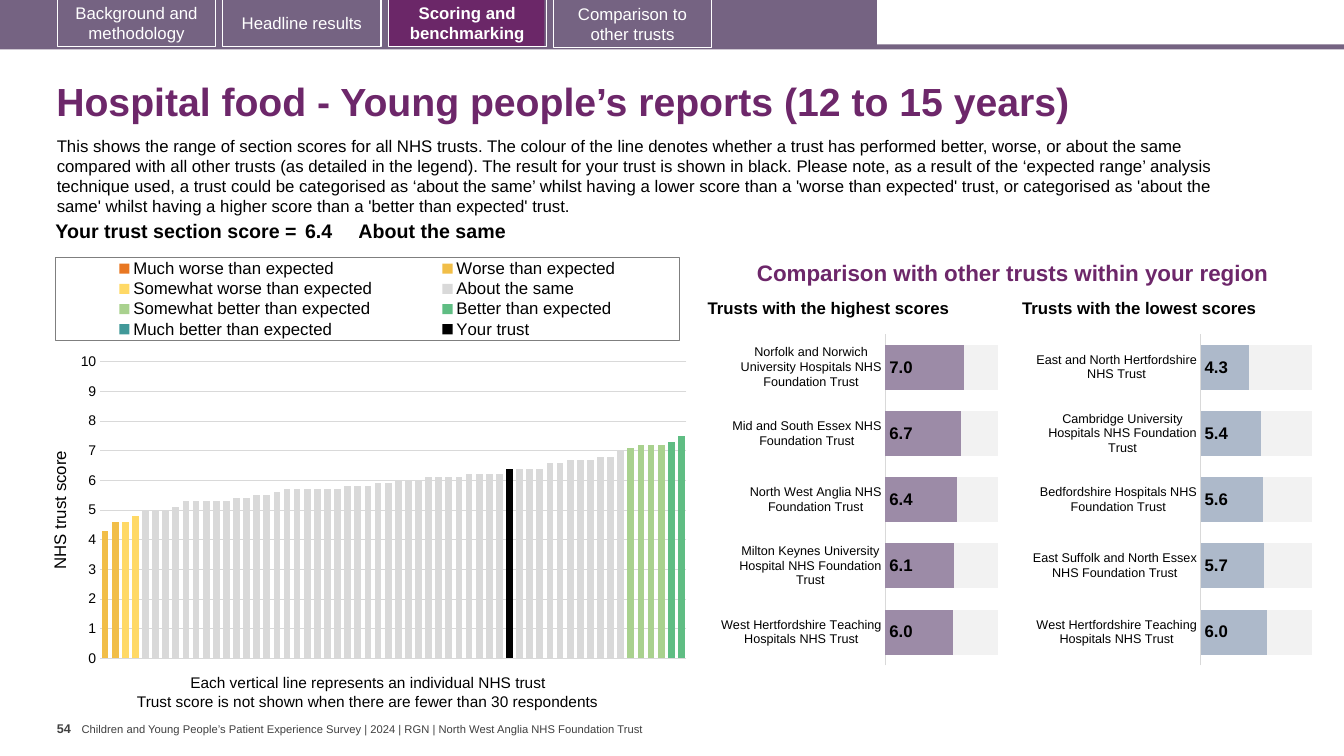
from lxml import etree
from pptx import Presentation
from pptx.chart.data import CategoryChartData
from pptx.dml.color import RGBColor
from pptx.enum.chart import XL_CHART_TYPE, XL_LABEL_POSITION, XL_LEGEND_POSITION, XL_TICK_MARK
from pptx.enum.shapes import MSO_SHAPE
from pptx.enum.text import MSO_ANCHOR, PP_ALIGN
from pptx.oxml import parse_xml
from pptx.oxml.ns import nsdecls, qn
from pptx.util import Inches, Pt

RECT = MSO_SHAPE.RECTANGLE
TOP, MIDDLE, BOTTOM = MSO_ANCHOR.TOP, MSO_ANCHOR.MIDDLE, MSO_ANCHOR.BOTTOM
CENTER, RIGHT = PP_ALIGN.CENTER, PP_ALIGN.RIGHT
COLUMNS, BARS = XL_CHART_TYPE.COLUMN_CLUSTERED, XL_CHART_TYPE.BAR_STACKED
NO_TICK = XL_TICK_MARK.NONE

THEME = {
    "font": "Arial",
    "purple": RGBColor.from_string("6D276A"), "active": RGBColor.from_string("6B2768"),
    "band": RGBColor.from_string("756382"), "white": RGBColor.from_string("FFFFFF"),
    "black": RGBColor.from_string("000000"), "footer": RGBColor.from_string("404040"),
    "grid": RGBColor.from_string("D9D9D9"), "rest": RGBColor.from_string("F2F2F2"),
    "highest": RGBColor.from_string("9C8BA7"), "lowest": RGBColor.from_string("ADB9CA"),
    "title": Pt(28), "heading": Pt(16), "score": Pt(14), "body": Pt(12),
    "note": Pt(11), "axis": Pt(10), "label": Pt(9), "foot": Pt(8),
}

prs = Presentation()
prs.slide_width, prs.slide_height = Inches(13.33), Inches(7.5)
COL, ROW = prs.slide_width / 160, prs.slide_height / 90
s = prs.slides.add_slide(prs.slide_layouts[6])


def place(x, y, w, h):
    return int(x * COL), int(y * ROW), int(w * COL), int(h * ROW)


def style(font, size, color="black", bold=False):
    font.name, font.size, font.bold = THEME["font"], THEME[size], bold
    font.color.rgb = THEME[color]


for x, y, w, h, color in [
    (0, 5.28, 160, 0.6, "band"),
    (0, 0, 104.4, 5.64, "band"),
    (46.32, 0, 18.48, 5.52, "active"),
]:
    bar = s.shapes.add_shape(RECT, *place(x, y, w, h))
    bar.shadow.inherit = False
    bar.fill.solid()
    bar.fill.fore_color.rgb = THEME[color]
    bar.line.fill.background()

for i, (name, y) in enumerate([
    ("Background and methodology", -0.12), ("Headline results", -0.12),
    ("Scoring and benchmarking", -0.12), ("Comparison to other trusts", 0),
]):
    tab = s.shapes.add_shape(RECT, *place(6.84 + 19.68 * i, y, 18.84, 5.64))
    tab.shadow.inherit = False
    tab.fill.background()
    tab.line.color.rgb = THEME["white"]
    tab.line.width = Pt(0.75)
    tf = tab.text_frame
    tf.word_wrap, tf.vertical_anchor = True, MIDDLE
    p = tf.paragraphs[0]
    p.text, p.alignment = name, CENTER
    style(p.font, "body", "white", name == "Scoring and benchmarking")

intro = (
    "This shows the range of section scores for all NHS trusts. The colour of the line denotes "
    "whether a trust has performed better, worse, or about the same compared with all other trusts "
    "(as detailed in the legend). The result for your trust is shown in black. Please note, as a "
    "result of the ‘expected range’ analysis technique used, a trust could be categorised as ‘about "
    "the same’ whilst having a lower score than a 'worse than expected' trust, or categorised as "
    "'about the same' whilst having a higher score than a 'better than expected' trust."
)
PADDED, FLUSH = (0.1, 0.05), (0, 0)
for text, at, size, color, bold, anchor, inset, wrap, spacing in [
    ("Hospital food - Young people’s reports (12 to 15 years)", (5.52, 8.04, 149.9, 8.64),
     "title", "purple", True, MIDDLE, PADDED, True, 0.9),
    (intro, (5.58, 15.54, 145.56, 10.92), "body", "black", False, TOP, PADDED, True, 1),
    ("Comparison with other trusts within your region", (90.12, 27.96, 65.64, 6.12),
     "heading", "purple", True, BOTTOM, FLUSH, True, 0.9),
    ("Trusts with the highest scores", (84.24, 35.16, 34.32, 2.76),
     "body", "black", True, BOTTOM, FLUSH, True, 0.9),
    ("Trusts with the lowest scores", (121.68, 35.16, 33.48, 2.76),
     "body", "black", True, BOTTOM, FLUSH, True, 0.9),
    ("Each vertical line represents an individual NHS trust", (21.48, 79.56, 45, 3.48),
     "note", "black", False, TOP, PADDED, False, 1),
    ("Trust score is not shown when there are fewer than 30 respondents",
     (15.12, 81.84, 57.72, 3.48), "note", "black", False, TOP, PADDED, False, 1),
    ("54", (6.78, 85.2, 3, 4.8), "label", "footer", True, TOP, (0, 0.05), True, 1),
    ("Children and Young People’s Patient Experience Survey | 2024 | RGN | North West Anglia NHS "
     "Foundation Trust", (9.72, 86, 68, 1.56), "foot", "footer", False, MIDDLE, FLUSH, True, 1),
]:
    tf = s.shapes.add_textbox(*place(*at)).text_frame
    tf.word_wrap, tf.vertical_anchor = wrap, anchor
    tf.margin_left = tf.margin_right = Inches(inset[0])
    tf.margin_top = tf.margin_bottom = Inches(inset[1])
    p = tf.paragraphs[0]
    p.text, p.line_spacing = text, spacing
    style(p.font, size, color, bold)

table = s.shapes.add_table(1, 3, *place(4.28, 25.8, 140.4, 3.7)).table
table.first_row = table.horz_banding = False
for i, (text, width, side) in enumerate([
    ("Your trust section score =", 31.56, 0.04), ("6.4", 6.84, 0.04), ("About the same", 102, 0),
]):
    table.columns[i].width = int(width * COL)
    cell = table.cell(0, i)
    cell.fill.background()
    cell.margin_left = cell.margin_right = Inches(side)
    cell.margin_top = cell.margin_bottom = Inches(0.04)
    p = cell.text_frame.paragraphs[0]
    p.text = text
    style(p.font, "score", bold=True)
table.cell(0, 0).text_frame.paragraphs[0].alignment = RIGHT

same = ([5] * 3 + [5.1] + [5.3] * 5 + [5.4] * 2 + [5.5] * 2 + [5.6] + [5.7] * 6 + [5.8] * 3
        + [5.9] * 2 + [6] * 3 + [6.1] * 4 + [6.2] * 4 + [6.4] * 4 + [6.6] * 2 + [6.7] * 3
        + [6.8] * 2 + [7])
ratings = [
    ("Much worse than expected", 0, [], "E87722"),
    ("Worse than expected", 0, [4.3, 4.6], "F1BE48"),
    ("Somewhat worse than expected", 2, [4.6, 4.8], "FFD966"),
    ("About the same", 4, same, "D9D9D9"),
    ("Somewhat better than expected", 52, [7.1, 7.2, 7.2, 7.2], "A9D18E"),
    ("Better than expected", 56, [7.3, 7.5], "5FBD83"),
    ("Much better than expected", 0, [], "419999"),
    ("Your trust", 40, [6.4], "000000"),
]
TRUSTS = 58
cd = CategoryChartData(number_format="0.0")
cd.categories = [str(n + 1) for n in range(TRUSTS)]
for name, first, scores, _ in ratings:
    cd.add_series(name, [None] * first + scores + [None] * (TRUSTS - first - len(scores)))
trusts = s.shapes.add_chart(COLUMNS, *place(5.52, 29.64, 76.92, 50.52), cd).chart
plot = trusts.plots[0]
plot.gap_width, plot.overlap = 50, 100
for series, rating in zip(plot.series, ratings):
    series.format.fill.solid()
    series.format.fill.fore_color.rgb = RGBColor.from_string(rating[3])
trusts.category_axis.visible = False
axis = trusts.value_axis
axis.minimum_scale, axis.maximum_scale, axis.major_unit = 0, 10, 1
axis.major_tick_mark = NO_TICK
axis.tick_labels.number_format, axis.tick_labels.number_format_is_linked = "0", False
axis.format.line.fill.background()
axis.major_gridlines.format.line.color.rgb = THEME["grid"]
axis.major_gridlines.format.line.width = Pt(0.75)
style(axis.tick_labels.font, "axis")
p = axis.axis_title.text_frame.paragraphs[0]
p.text = "NHS trust score"
style(p.font, "body")
trusts.has_legend = True
legend = trusts.legend
legend.position, legend.include_in_layout = XL_LEGEND_POSITION.TOP, False
style(legend.font, "body")
legend_xml = trusts.element.find(".//" + qn("c:legend"))
legend_xml.find(qn("c:overlay")).addnext(parse_xml(
    f'<c:spPr {nsdecls("c", "a")}><a:ln w="9525"><a:solidFill><a:srgbClr val="7F7F7F"/>'
    '</a:solidFill></a:ln></c:spPr>'))
area = trusts.element.find(".//" + qn("c:plotArea"))
columns = area.find(qn("c:barChart"))
right = parse_xml(
    f'<c:barChart {nsdecls("c")}><c:barDir val="col"/><c:grouping val="clustered"/>'
    '<c:varyColors val="0"/><c:gapWidth val="50"/><c:overlap val="100"/>'
    '<c:axId val="501"/><c:axId val="502"/></c:barChart>')
right.insert(3, columns.findall(qn("c:ser"))[-1])
columns.addnext(right)
value_xml = area.find(qn("c:valAx"))
for kind, own, other, low_high, deleted, side, cross, extra in [
    ("valAx", 502, 501, '<c:max val="10"/><c:min val="0"/>', 0, "r", "max",
     '<c:crossBetween val="between"/>'),
    ("catAx", 501, 502, "", 1, "b", "autoZero", ""),
]:
    value_xml.addnext(parse_xml(
        f'<c:{kind} {nsdecls("c", "a")}><c:axId val="{own}"/><c:scaling>'
        f'<c:orientation val="minMax"/>{low_high}</c:scaling><c:delete val="{deleted}"/>'
        f'<c:axPos val="{side}"/><c:majorTickMark val="out"/><c:minorTickMark val="none"/>'
        '<c:tickLblPos val="none"/><c:spPr><a:ln><a:noFill/></a:ln></c:spPr>'
        f'<c:crossAx val="{other}"/><c:crosses val="{cross}"/>{extra}</c:{kind}>'))
layouts = [(legend_xml, 1, (1.35, 2, 96.7, 19.6)), (area, 0, (8.3, 26.6, 90.8, 69.9))]

west_herts = "West Hertfordshire Teaching Hospitals NHS Trust"
for x, w, color, shares, scores in [
    (85.2, 34.32, "highest", (58.9, 2.2, 39.1, 95.8), [
        ("Norfolk and Norwich University Hospitals NHS Foundation Trust", 7),
        ("Mid and South Essex NHS Foundation Trust", 6.7),
        ("North West Anglia NHS Foundation Trust", 6.4),
        ("Milton Keynes University Hospital NHS Foundation Trust", 6.1), (west_herts, 6)]),
    (122.28, 34.68, "lowest", (59.6, 2.2, 38.2, 95.8), [
        ("East and North Hertfordshire NHS Trust", 4.3),
        ("Cambridge University Hospitals NHS Foundation Trust", 5.4),
        ("Bedfordshire Hospitals NHS Foundation Trust", 5.6),
        ("East Suffolk and North Essex NHS Foundation Trust", 5.7), (west_herts, 6)]),
]:
    cd = CategoryChartData(number_format="0.0")
    cd.categories = [name for name, _ in scores]
    cd.add_series("Series 1", [score for _, score in scores])
    cd.add_series("Series 2", [round(10 - score, 1) for _, score in scores])
    region = s.shapes.add_chart(BARS, *place(x, 38.88, w, 41.16), cd).chart
    region.has_legend = False
    plot = region.plots[0]
    plot.gap_width, plot.overlap = 47, 100
    for series, fill in zip(plot.series, (color, "rest")):
        series.format.fill.solid()
        series.format.fill.fore_color.rgb = THEME[fill]
    labels = plot.series[0].data_labels
    labels.show_value, labels.position = True, XL_LABEL_POSITION.INSIDE_BASE
    labels.number_format, labels.number_format_is_linked = "0.0", False
    style(labels.font, "body", bold=True)
    axis = region.category_axis
    axis.reverse_order, axis.major_tick_mark = True, NO_TICK
    axis.format.line.color.rgb = THEME["grid"]
    axis.format.line.width = Pt(0.75)
    style(axis.tick_labels.font, "label")
    axis = region.value_axis
    axis.minimum_scale, axis.maximum_scale = 0, 10
    axis.visible = axis.has_major_gridlines = False
    layouts.append((region.element.find(".//" + qn("c:plotArea")), 0, shares))

for part, index, shares in layouts:
    for old in part.findall(qn("c:layout")):
        part.remove(old)
    layout = etree.Element(qn("c:layout"))
    manual = etree.SubElement(layout, qn("c:manualLayout"))
    target = [("layoutTarget", "inner")] if index == 0 else []
    modes = [("xMode", "edge"), ("yMode", "edge")]
    for tag, value in target + modes + [(side, share / 100) for side, share in zip("xywh", shares)]:
        etree.SubElement(manual, qn("c:" + tag)).set("val", str(value))
    part.insert(index, layout)

prs.save("out.pptx")
